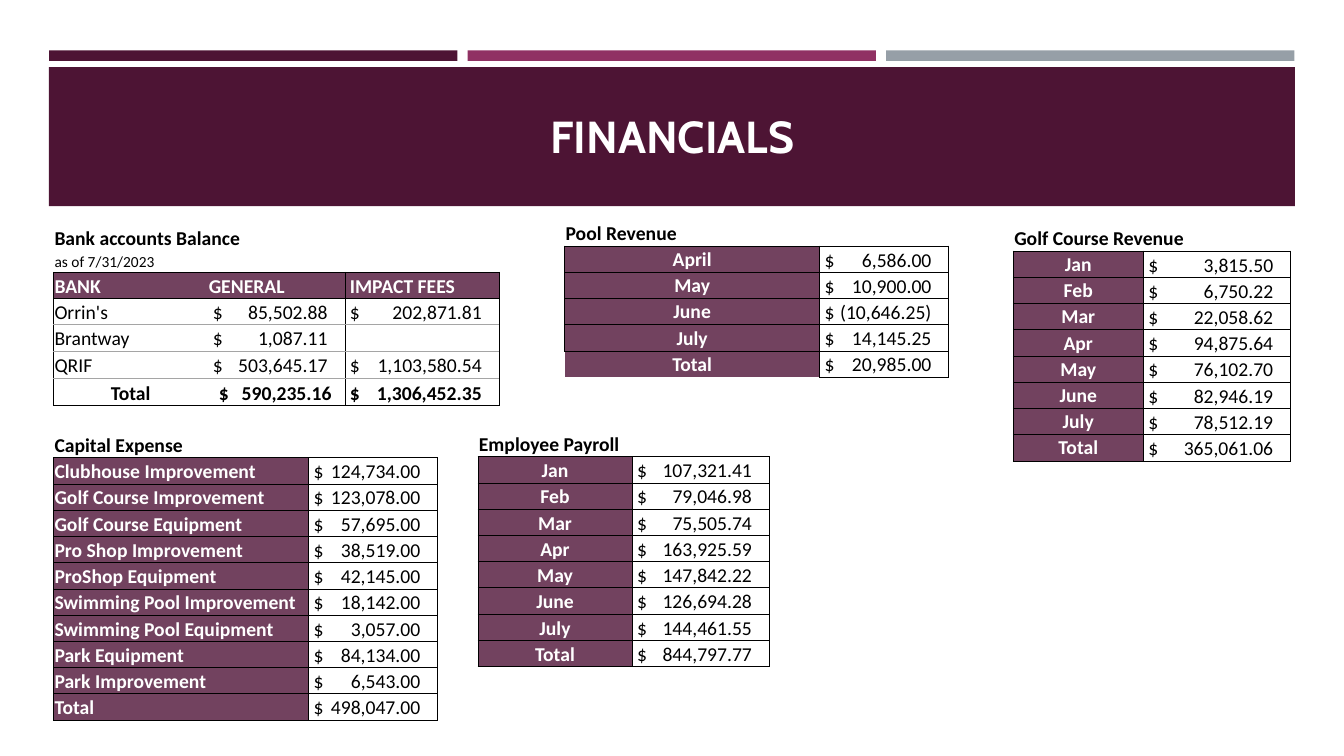
from lxml.etree import SubElement
from pptx import Presentation
from pptx.dml.color import RGBColor
from pptx.enum.shapes import MSO_SHAPE as Shape
from pptx.enum.text import MSO_ANCHOR as Anchor, MSO_AUTO_SIZE as AutoSize, PP_ALIGN as Align
from pptx.oxml.ns import qn
from pptx.util import Inches, Pt

WIDTH, HEIGHT = Inches(13.33), Inches(7.5)
PLUM = RGBColor(0x4D, 0x14, 0x34)
MAGENTA = RGBColor(0x90, 0x31, 0x63)
SLATE = RGBColor(0x96, 0x9F, 0xA7)
MAUVE = RGBColor(0x72, 0x42, 0x5F)
GRAY = RGBColor(0xA5, 0xA5, 0xA5)
BLACK = RGBColor(0, 0, 0)
WHITE = RGBColor(0xFF, 0xFF, 0xFF)
PLAIN_STYLE = "{2D5ABB26-0587-4C30-8999-92F81FD0307C}"
BOX = {side: BLACK for side in "LRTB"}
ROW = 3.47

PAYROLL = [("Jan", "107,321.41"), ("Feb", "79,046.98"), ("Mar", "75,505.74"),
           ("Apr", "163,925.59"), ("May", "147,842.22"), ("June", "126,694.28"),
           ("July", "144,461.55"), ("Total", "844,797.77")]
GOLF = [("Jan", "3,815.50"), ("Feb", "6,750.22"), ("Mar", "22,058.62"),
        ("Apr", "94,875.64"), ("May", "76,102.70"), ("June", "82,946.19"),
        ("July", "78,512.19"), ("Total", "365,061.06")]
CAPITAL = [("Clubhouse Improvement", "124,734.00"), ("Golf Course Improvement", "123,078.00"),
           ("Golf Course Equipment", "57,695.00"), ("Pro Shop Improvement", "38,519.00"),
           ("ProShop Equipment", "42,145.00"), ("Swimming Pool Improvement", "18,142.00"),
           ("Swimming Pool Equipment", "3,057.00"), ("Park Equipment", "84,134.00"),
           ("Park Improvement", "6,543.00"), ("Total", "498,047.00")]
POOL = [("April", "6,586.00"), ("May", "10,900.00"), ("June", "(10,646.25)"),
        ("July", "14,145.25"), ("Total", "20,985.00")]
BANKS = [("Orrin's", "85,502.88", "202,871.81"), ("Brantway", "1,087.11", ""),
         ("QRIF", "503,645.17", "1,103,580.54"), ("Total", "590,235.16", "1,306,452.35")]


def across(percent):
    return round(WIDTH * percent / 100)


def down(percent):
    return round(HEIGHT * percent / 100)


def add_bar(page, left, top, width, height, color):
    bar = page.shapes.add_shape(Shape.RECTANGLE, across(left), down(top), across(width), down(height))
    bar.shadow.inherit = False
    bar.fill.solid()
    bar.fill.fore_color.rgb = color
    bar.line.fill.background()


def write(para, text, size, color, bold, font="Calibri"):
    span = para.add_run()
    span.text = text
    span.font.name, span.font.size = font, Pt(size)
    span.font.bold, span.font.color.rgb = bold, color


def set_title(page, text):
    title = page.shapes.title
    title.left, title.top = across(4.8), down(13.47)
    title.width, title.height = across(90.47), down(8.67)
    frame = title.text_frame
    frame.auto_size, frame.vertical_anchor = AutoSize.NONE, Anchor.BOTTOM
    frame.paragraphs[0].alignment = Align.CENTER
    write(frame.paragraphs[0], text, 32, WHITE, True, "Cabin")
    page.shapes._spTree.append(title._element)


def add_grid(page, left, top, columns, rows):
    frame = page.shapes.add_table(len(rows), len(columns), across(left), down(top),
                                  across(sum(columns)), down(sum(rows)))
    table = frame.table
    table.first_row = table.horz_banding = False
    table._tbl.tblPr.find(qn("a:tableStyleId")).text = PLAIN_STYLE
    for column, width in zip(table.columns, columns):
        column.width = across(width)
    for row, height in zip(table.rows, rows):
        row.height = down(height)
    for cell in table.iter_cells():
        cell.margin_left = cell.margin_right = cell.margin_top = Inches(0.01)
        cell.margin_bottom = 0
        cell.vertical_anchor = Anchor.BOTTOM
        SubElement(cell.text_frame.paragraphs[0]._p, qn("a:endParaRPr"), sz="1100")
    return table


def set_borders(cell, borders):
    properties = cell._tc.get_or_add_tcPr()
    for side in "LRTB":
        if side in borders:
            line = SubElement(properties, qn(f"a:ln{side}"), w=str(Pt(0.5)))
            fill = SubElement(line, qn("a:solidFill"))
            SubElement(fill, qn("a:srgbClr"), val=str(borders[side]))


def fill_cell(cell, text, borders, color=BLACK, bold=False, size=14, align=Align.LEFT, fill=None):
    set_borders(cell, borders)
    if fill is not None:
        cell.fill.solid()
        cell.fill.fore_color.rgb = fill
    para = cell.text_frame.paragraphs[0]
    para.alignment = align
    if text:
        write(para, text, size, color, bold)


def fill_amount(cell, amount, width, borders, bold=False, inset=0.05, gap=0.17):
    cell.margin_left = Inches(inset)
    fill_cell(cell, f"$\t{amount}" if amount else "", borders, bold=bold)
    properties = cell.text_frame.paragraphs[0]._p.get_or_add_pPr()
    stops = SubElement(properties, qn("a:tabLst"))
    SubElement(stops, qn("a:tab"), pos=str(across(width) - Inches(inset + gap)), algn="r")


def add_ledger(page, heading, entries, left, top, columns, align=Align.CENTER,
               anchor=Anchor.BOTTOM, merged=False, total_borders=BOX):
    table = add_grid(page, left, top, columns, [ROW] * (len(entries) + 1))
    if merged:
        table.cell(0, 0).merge(table.cell(0, 1))
    fill_cell(table.cell(0, 0), heading, {"B": BLACK}, bold=True)
    set_borders(table.cell(0, 1), {"B": BLACK})
    for index, (label, amount) in enumerate(entries, 1):
        name = table.cell(index, 0)
        name.vertical_anchor = anchor
        borders = total_borders if label == "Total" else BOX
        fill_cell(name, label, borders, WHITE, True, align=align, fill=MAUVE)
        fill_amount(table.cell(index, 1), amount, columns[1], BOX)


def add_bank_table(page):
    columns = [11.48, 10.2, 11.48]
    sides = [{"L": BLACK}, {"R": BLACK}, {"L": BLACK, "R": BLACK}]
    table = add_grid(page, 3.98, 29.73, columns, [ROW, 2.8, ROW, ROW, ROW, 3.6, 3.6])
    table.cell(0, 0).merge(table.cell(0, 1))
    fill_cell(table.cell(0, 0), "Bank accounts Balance", {}, bold=True)
    fill_cell(table.cell(1, 0), "as of 7/31/2023", {"B": BLACK}, size=11)
    for index, heading in enumerate(["BANK", "GENERAL", "IMPACT FEES"]):
        cell = table.cell(2, index)
        fill_cell(cell, heading, {**sides[index], "T": BLACK, "B": BLACK}, WHITE, True, fill=MAUVE)
    table.cell(2, 2).margin_left = Inches(0.05)
    for row, (bank, *amounts) in enumerate(BANKS, 3):
        total = bank == "Total"
        edges = {"T": BLACK if row == 3 else GRAY, "B": BLACK if total else GRAY}
        fill_cell(table.cell(row, 0), bank, {**sides[0], **edges}, bold=total,
                  align=Align.CENTER if total else Align.LEFT)
        for column, amount in enumerate(amounts, 1):
            inset, gap = (0.11, 0.13) if total and column == 1 else (0.05, 0.17)
            fill_amount(table.cell(row, column), amount, columns[column],
                        {**sides[column], **edges}, total, inset, gap)


def main():
    deck = Presentation()
    deck.slide_width, deck.slide_height = WIDTH, HEIGHT
    page = deck.slides.add_slide(deck.slide_layouts[5])
    for index, color in enumerate([PLUM, MAGENTA, SLATE]):
        add_bar(page, 3.66 + index * 31.14, 6.67, 30.38, 1.4, color)
    add_bar(page, 3.64, 8.87, 92.7, 18.4, PLUM)
    set_title(page, "FINANCIALS")
    add_bank_table(page)
    add_ledger(page, "Employee Payroll", PAYROLL, 35.56, 56.93, [11.48, 10.2])
    add_ledger(page, "Golf Course Revenue", GOLF, 75.39, 29.73, [9.68, 10.95],
               anchor=Anchor.MIDDLE, merged=True)
    add_ledger(page, "Capital Expense", CAPITAL, 3.98, 57.07, [18.98, 9.6], align=Align.LEFT)
    add_ledger(page, "Pool Revenue", POOL, 42.01, 29.07, [18.98, 9.6], anchor=Anchor.MIDDLE,
               total_borders={"T": BLACK, "R": BLACK})
    deck.save("out.pptx")


if __name__ == "__main__":
    main()
